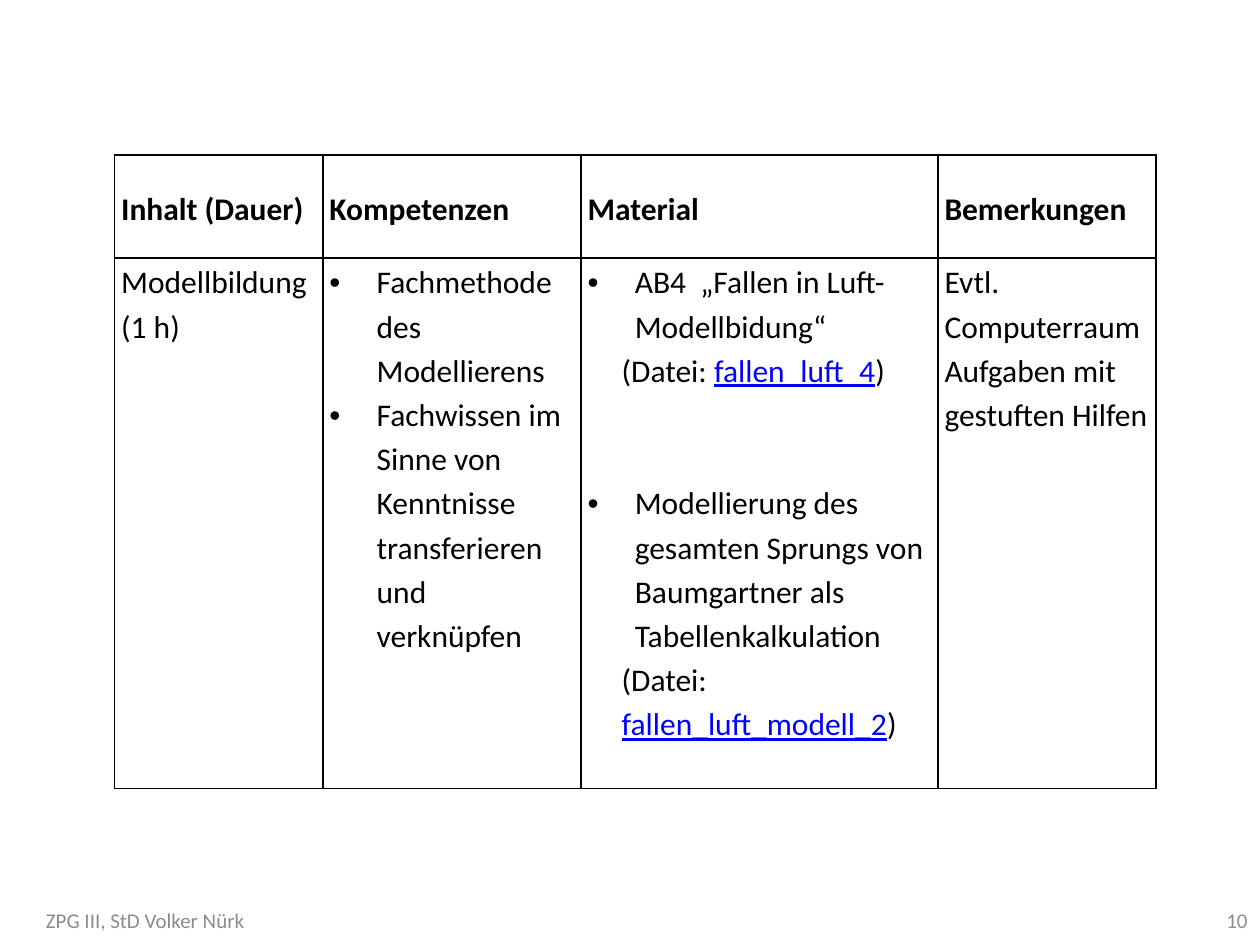
from lxml.etree import SubElement
from pptx import Presentation
from pptx.dml.color import RGBColor
from pptx.enum.text import MSO_ANCHOR as Anchor, PP_ALIGN as Align
from pptx.oxml.ns import qn
from pptx.util import Pt

FONT = "Calibri"
BLACK, LINK, GREY = "000000", "0000FF", "8C8C8C"
COLS = [119, 147.5, 204, 124.5]
ROWS = [59, 303]
HEADERS = ["Inhalt (Dauer)", "Kompetenzen", "Material", "Bemerkungen"]
BULLET, FILE, PLAIN = (27, -27), (19.5, 0), (0, 0)
BODY = [
    [(PLAIN, 0, ["Modellbildung"]), (PLAIN, 0, ["(1 h)"])],
    [(BULLET, 0, ["Fachmethode des Modellierens"]),
     (BULLET, 0, ["Fachwissen im Sinne von Kenntnisse transferieren und verknüpfen"])],
    [(BULLET, 0, ["AB4  „Fallen in Luft-Modellbidung“"]),
     (FILE, 0, ["(Datei: ", "fallen_luft_4", ")"]),
     (BULLET, 50.5, ["Modellierung des gesamten Sprungs von Baumgartner als Tabellenkalkulation"]),
     (FILE, 0, ["(Datei: ", "fallen_luft_modell_2", ")"])],
    [(PLAIN, 0, ["Evtl. Computerraum"]),
     (PLAIN, 0, ["Aufgaben mit gestuften Hilfen"])],
]


def color(hex_code):
    return RGBColor.from_string(hex_code)


def format_run(r, size, hex_code, bold=False, underline=False):
    r.font.name = FONT
    r.font.size = Pt(size)
    r.font.bold = bold
    r.font.underline = underline
    r.font.color.rgb = color(hex_code)


def add_borders(cell):
    pr = cell._tc.get_or_add_tcPr()
    for i, side in enumerate(("a:lnL", "a:lnR", "a:lnT", "a:lnB")):
        ln = SubElement(pr, qn(side), w=str(Pt(1)))
        fill = SubElement(ln, qn("a:solidFill"))
        SubElement(fill, qn("a:srgbClr"), val=BLACK)
        pr.insert(i, ln)


def fill_cell(cell, paragraphs, bold=False):
    cell.margin_left = cell.margin_right = Pt(3.75)
    cell.margin_top = cell.margin_bottom = 0
    cell.fill.background()
    add_borders(cell)
    tf = cell.text_frame
    for i, (indent, before, parts) in enumerate(paragraphs):
        p = tf.add_paragraph() if i else tf.paragraphs[0]
        p.line_spacing = 1.15
        p.space_before = Pt(before)
        pr = p._p.get_or_add_pPr()
        pr.set("marL", str(Pt(indent[0])))
        pr.set("indent", str(Pt(indent[1])))
        if indent == BULLET:
            SubElement(pr, qn("a:buFont"), typeface="Arial")
            SubElement(pr, qn("a:buChar"), char="•")
        for k, text in enumerate(parts):
            r = p.add_run()
            r.text = text
            is_link = k == 1
            format_run(r, 18, LINK if is_link else BLACK, bold, is_link)


def add_plan_table(slide, left, top):
    frame = slide.shapes.add_table(len(ROWS), len(COLS), Pt(left), Pt(top),
                                   Pt(sum(COLS)), Pt(sum(ROWS)))
    table = frame.table
    table.first_row = table.horz_banding = False
    for row, height in zip(table.rows, ROWS):
        row.height = Pt(height)
    for i, (width, header, body) in enumerate(zip(COLS, HEADERS, BODY)):
        table.columns[i].width = Pt(width)
        head = table.cell(0, i)
        fill_cell(head, [(PLAIN, 0, [header])], bold=True)
        head.vertical_anchor = Anchor.MIDDLE
        fill_cell(table.cell(1, i), body)
    kompetenzen = table.cell(0, 1)
    kompetenzen.vertical_anchor = Anchor.TOP
    kompetenzen.margin_top = Pt(16.8)


def add_footer_text(slide, left, top, width, height, text, align):
    sp = slide.shapes.add_textbox(Pt(left), Pt(top), Pt(width), Pt(height))
    tf = sp.text_frame
    tf.word_wrap = True
    tf.vertical_anchor = Anchor.MIDDLE
    tf.text = text
    p = tf.paragraphs[0]
    p.alignment = align
    format_run(p.runs[0], 12, GREY)


def main():
    prs = Presentation()
    prs.slide_width, prs.slide_height = Pt(720), Pt(540)
    slide = prs.slides.add_slide(prs.slide_layouts[6])
    add_plan_table(slide, 65.5, 88.5)
    add_footer_text(slide, -31, 511, 228, 29, "ZPG III, StD Volker Nürk", Align.CENTER)
    add_footer_text(slide, 552, 511, 168, 29, "10", Align.RIGHT)
    prs.save("out.pptx")


if __name__ == "__main__":
    main()
